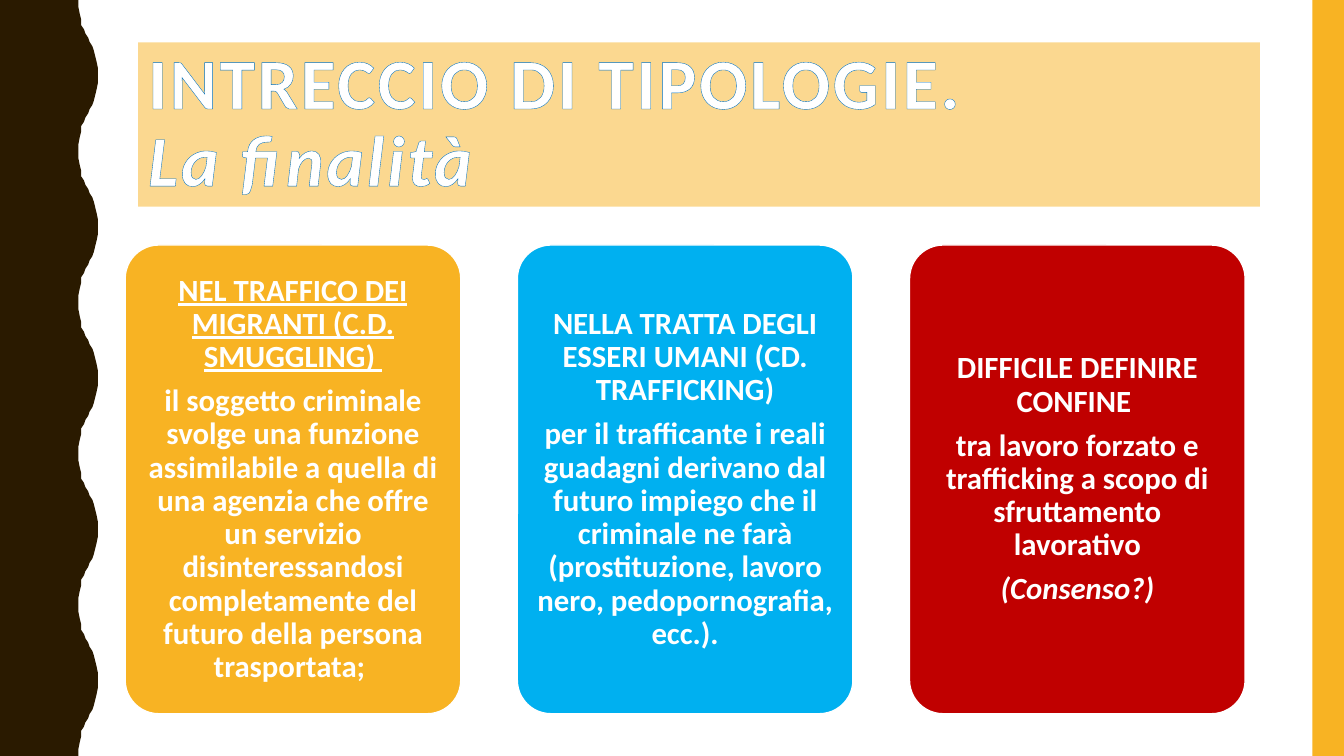
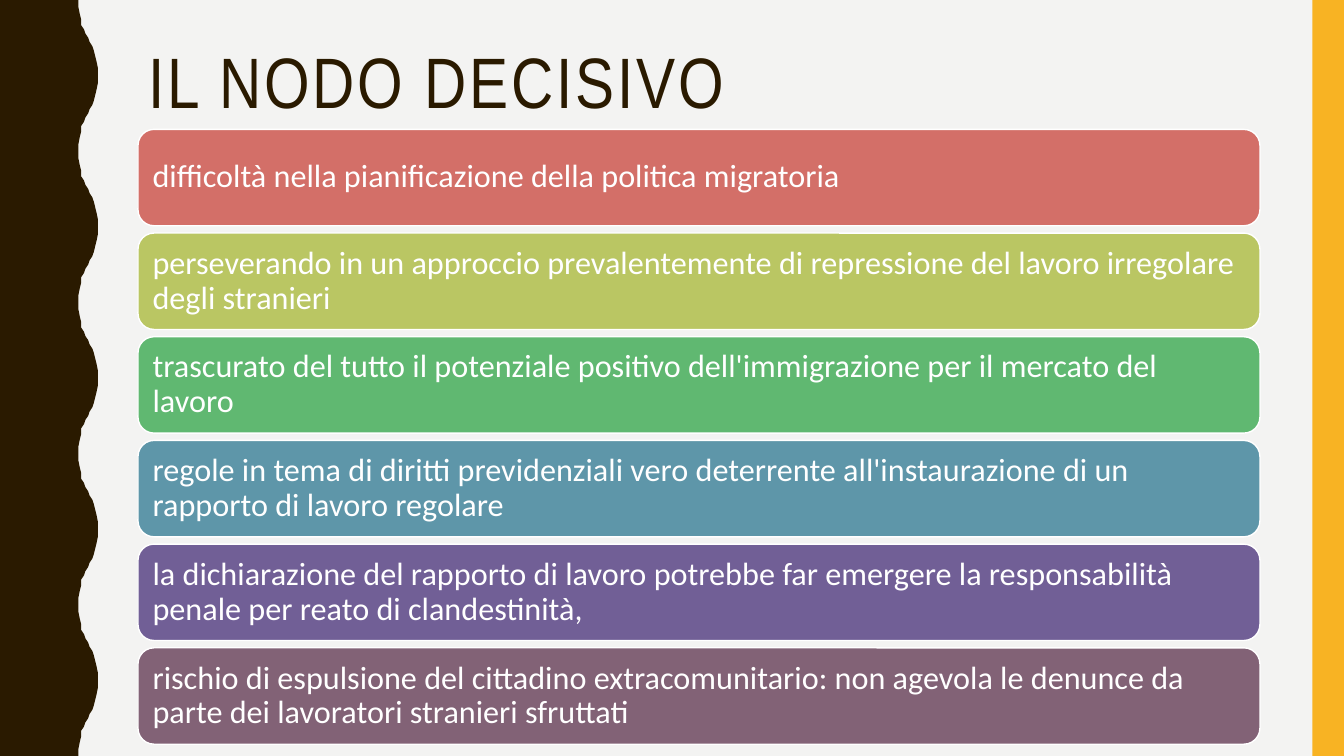
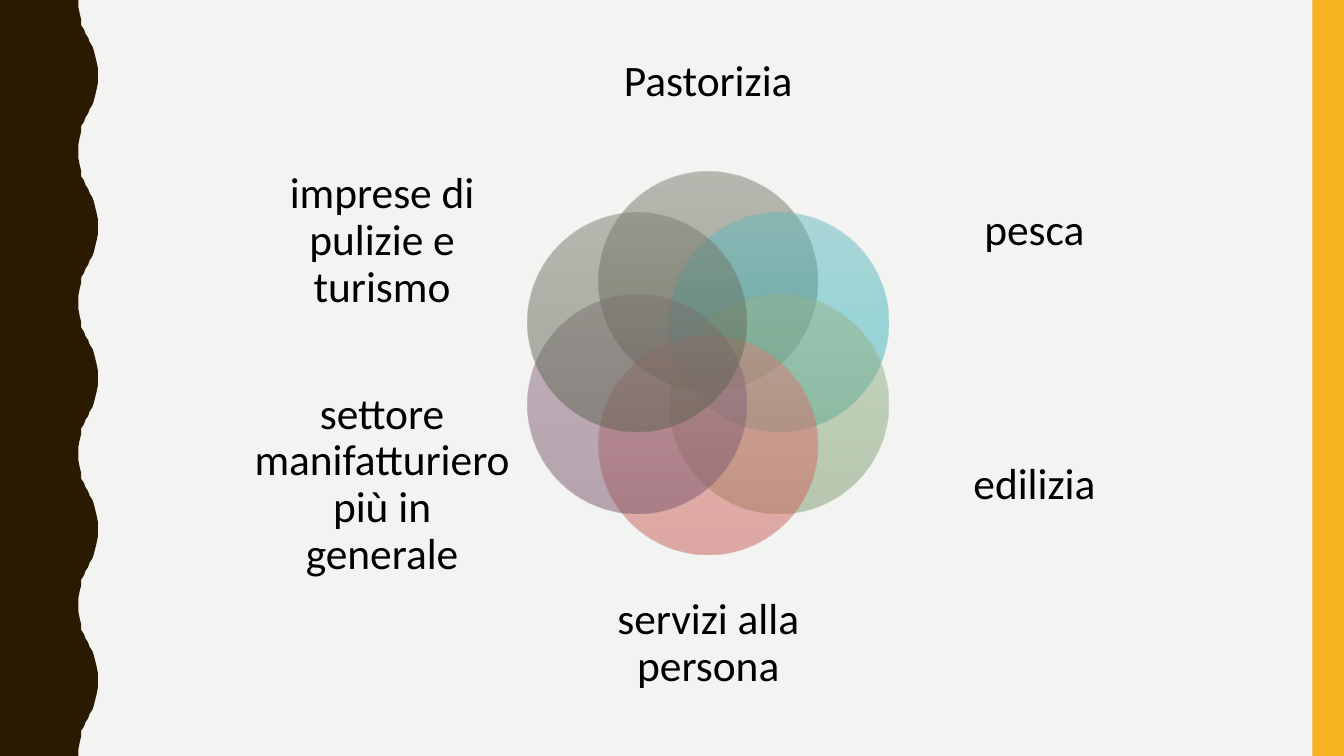
import math

import pptx
import pptx.dml.color
import pptx.enum.dml
import pptx.enum.shapes
import pptx.enum.text
import pptx.oxml
import pptx.oxml.ns
import pptx.util
from lxml import etree

Pt = pptx.util.Pt
qn = pptx.oxml.ns.qn
SHAPE = pptx.enum.shapes.MSO_SHAPE
ALIGN = pptx.enum.text.PP_ALIGN
ANCHOR = pptx.enum.text.MSO_ANCHOR

COLORS = {
    "brown": "2A1A00", "amber": "F8B323", "paper": "F3F3F2",
    "white": "FFFFFF", "black": "000000", "blue": "0070C0",
    "sky": "00B0F0", "red": "C00000",
    "coral": "D36F68", "lime": "BAC663", "green": "60B871",
    "teal": "5E96A9", "violet": "715F96", "mauve": "826276",
}
GRADIENTS = {
    "olive": ("797D70", "656B58", "5A604E"),
    "aqua": ("64BBBE", "40B7BB", "34A8AB"),
    "sage": ("9AB48E", "8BAC7C", "7B9B6C"),
    "rose": ("D9827D", "D86A63", "C65952"),
    "plum": ("917787", "846076", "76546A"),
}
WIDTH, HEIGHT = 960, 540
TITLE_BOX = (98.6, 30.2, 801.4, 117.4)
BODY_FONT = "Calibri"

# Half a wave of the left band's edge, as (x, y)
HALF_WAVE = [
    (56.2, 0), (56.4, 5), (56.9, 10), (57.6, 14.4), (58.5, 18),
    (59.8, 21), (61.2, 24), (62.7, 27), (64, 30), (65.5, 33),
    (67, 36), (68.4, 39.6), (69.2, 44), (69.8, 49), (70, 54),
]
WAVE_HEIGHT = 108


# Shared helpers
def rgb(name):
    return pptx.dml.color.RGBColor.from_string(COLORS[name])


def paint(sp, fill, line=None):
    sp.shadow.inherit = False
    sp.fill.solid()
    sp.fill.fore_color.rgb = rgb(fill)
    if line:
        sp.line.color.rgb = rgb(line)
        sp.line.width = Pt(1)
    else:
        sp.line.fill.background()


def add_box(s, shape, box, fill, line=None):
    sp = s.shapes.add_shape(shape, *map(Pt, box))
    paint(sp, fill, line)
    return sp


def add_run(p, text, size, color, font=BODY_FONT, **styles):
    r = p.add_run()
    r.text = text
    r.font.size = Pt(size)
    r.font.name = font
    r.font.color.rgb = rgb(color)
    for name, value in styles.items():
        setattr(r.font, name, value)
    return r


def write(tf, paragraphs, size, color, align, inset, **shared):
    """Fill a text frame with (text, styles) paragraphs."""
    tf.word_wrap = True
    tf.vertical_anchor = ANCHOR.MIDDLE
    tf.margin_left = tf.margin_right = Pt(inset)
    tf.margin_top = tf.margin_bottom = Pt(inset)
    for i, (text, styles) in enumerate(paragraphs):
        p = tf.add_paragraph() if i else tf.paragraphs[0]
        p.alignment = align
        p.line_spacing = 0.9
        p.space_after = Pt(round(size * 0.35, 1))
        add_run(p, text, size, color, **shared, **styles)


# Master: background, wavy band, right stripe
def decorate_master(prs, s):
    master = prs.slide_master
    master.background.fill.solid()
    master.background.fill.fore_color.rgb = rgb("paper")

    wave = HALF_WAVE + [(x, WAVE_HEIGHT - y) for x, y in HALF_WAVE[-2::-1]]
    edge = [(x, y + n * WAVE_HEIGHT)
            for n in range(HEIGHT // WAVE_HEIGHT) for x, y in wave]
    builder = s.shapes.build_freeform(0, 0, scale=Pt(1))
    builder.add_line_segments(edge + [(0, HEIGHT)], close=True)
    band = builder.convert_to_shape()
    paint(band, "brown")
    stripe = add_box(s, SHAPE.RECTANGLE, (937.5, 0, 22.5, HEIGHT), "amber")

    for i, sp in enumerate((band, stripe)):
        sp.element.nvSpPr.cNvPr.set("id", str(100 + i))
        master.shapes.element.insert(2 + i, sp.element)


# Title
def add_title(s, lines, color, font, outline=None):
    sp = s.shapes.title
    sp.left, sp.top, sp.width, sp.height = map(Pt, TITLE_BOX)
    tf = sp.text_frame
    tf.word_wrap = True
    tf.auto_size = pptx.enum.text.MSO_AUTO_SIZE.NONE
    tf.vertical_anchor = ANCHOR.TOP
    p = tf.paragraphs[0]
    p.alignment = ALIGN.LEFT
    p.line_spacing = 0.9
    for i, (text, styles) in enumerate(lines):
        if i:
            p.add_line_break()
        r = add_run(p, text, 51, color, font, **styles)
        rPr = r.font._element
        rPr.set("spc", "200")
        if outline:
            rPr.insert(0, pptx.oxml.parse_xml(
                f'<a:ln {pptx.oxml.ns.nsdecls("a")} w="{Pt(1.5)}"><a:solidFill>'
                f'<a:srgbClr val="{COLORS[outline]}"/></a:solidFill></a:ln>'))
    return sp


def add_alpha(color, percent):
    etree.SubElement(color, qn("a:alpha")).set("val", str(percent * 1000))


# Row of cards
def add_cards(s, box, cards, gap):
    left, top, width, height = box
    card_w = (width - gap * (len(cards) - 1)) / len(cards)
    for i, (fill, paragraphs) in enumerate(cards):
        card = (left + i * (card_w + gap), top, card_w, height)
        sp = add_box(s, SHAPE.ROUNDED_RECTANGLE, card, fill, "white")
        sp.adjustments[0] = 0.1
        write(sp.text_frame, paragraphs, 22, "white", ALIGN.CENTER, 6.6, bold=True)


# Stack of bars
def add_bars(s, box, bars, gap):
    left, top, width, height = box
    bar_h = (height - gap * (len(bars) - 1)) / len(bars)
    for i, (fill, text) in enumerate(bars):
        bar = (left, top + i * (bar_h + gap), width, bar_h)
        sp = add_box(s, SHAPE.ROUNDED_RECTANGLE, bar, fill, "white")
        write(sp.text_frame, [(text, {})], 23, "white", ALIGN.LEFT, 7.2)


# Ring of overlapping circles with labels
def fill_gradient(sp, hexes):
    sp.fill.gradient()
    sp.fill.gradient_angle = 270
    stops = sp.element.spPr.find(qn("a:gradFill")).find(qn("a:gsLst"))
    for stop in list(stops):
        stops.remove(stop)
    for position, value in zip((0, 50, 100), hexes):
        stop = etree.SubElement(stops, qn("a:gs"))
        stop.set("pos", str(position * 1000))
        color = etree.SubElement(stop, qn("a:srgbClr"))
        color.set("val", value)
        add_alpha(color, 50)


def add_ring(s, center, ring, diameter, sectors):
    cx, cy = center
    for i, (gradient, text, dx, dy, width, height) in enumerate(sectors):
        angle = 2 * math.pi * i / len(sectors)
        x = cx + ring * math.sin(angle) - diameter / 2
        y = cy - ring * math.cos(angle) - diameter / 2
        circle = add_box(s, SHAPE.OVAL, (x, y, diameter, diameter), "white")
        fill_gradient(circle, GRADIENTS[gradient])
        label = (cx + dx - width / 2, cy + dy - height / 2, width, height)
        tb = s.shapes.add_textbox(*map(Pt, label))
        write(tb.text_frame, [(text, {})], 31, "black", ALIGN.CENTER, 0)


# Slides
def build_purpose(s):
    s.background.fill.solid()
    s.background.fill.fore_color.rgb = rgb("white")
    title = add_title(s, [("INTRECCIO DI TIPOLOGIE.", {"bold": True}),
                          ("La finalità", {"bold": True, "italic": True})],
                      "white", BODY_FONT, outline="blue")
    title.fill.solid()
    title.fill.fore_color.rgb = rgb("amber")
    add_alpha(title.element.spPr.find(qn("a:solidFill"))[0], 50)
    add_cards(s, (89.4, 175, 800, 334.8), [
        ("amber", [
            ("NEL TRAFFICO DEI MIGRANTI (C.D. SMUGGLING) ", {"underline": True}),
            ("il soggetto criminale svolge una funzione assimilabile a quella di "
             "una agenzia che offre un servizio disinteressandosi completamente "
             "del futuro della persona trasportata; ", {})]),
        ("sky", [
            ("NELLA TRATTA DEGLI ESSERI UMANI (CD. TRAFFICKING)", {}),
            ("per il trafficante i reali guadagni derivano dal futuro impiego che "
             "il criminale ne farà (prostituzione, lavoro nero, pedopornografia, "
             "ecc.).", {})]),
        ("red", [
            ("DIFFICILE DEFINIRE CONFINE ", {}),
            ("tra lavoro forzato e trafficking a scopo di sfruttamento "
             "lavorativo", {}),
            ("(Consenso?)", {"italic": True})]),
    ], gap=40.4)


def build_key_issue(s):
    add_title(s, [("IL NODO DECISIVO", {})], "brown", "Arial Narrow")
    add_bars(s, (98.6, 92.4, 801.4, 439.2), [
        ("coral", "difficoltà nella pianificazione della politica migratoria"),
        ("lime", "perseverando in un approccio prevalentemente di repressione del "
                 "lavoro irregolare degli stranieri"),
        ("green", "trascurato del tutto il potenziale positivo dell'immigrazione "
                  "per il mercato del lavoro"),
        ("teal", "regole in tema di diritti previdenziali vero deterrente "
                 "all'instaurazione di un rapporto di lavoro regolare"),
        ("violet", "la dichiarazione del rapporto di lavoro potrebbe far emergere "
                   "la responsabilità penale per reato di clandestinità,"),
        ("mauve", "rischio di espulsione del cittadino extracomunitario: non "
                  "agevola le denunce da parte dei lavoratori stranieri sfruttati"),
    ], gap=5.2)


def build_sectors(s):
    add_ring(s, (505.9, 259.2), 58.6, 156.4, [
        ("olive", "Pastorizia", 0, -200.3, 195, 106.6),
        ("aqua", "pesca", 233, -93.6, 185, 116.6),
        ("sage", "edilizia", 233, 87.5, 185, 130.3),
        ("rose", "servizi alla persona", 0, 200.9, 195, 106.6),
        ("plum", "settore manifatturiero più in generale", -233, 87.5, 185, 130.3),
        ("olive", "imprese di pulizie e turismo", -233, -86.8, 185, 130.3),
    ])


def main():
    prs = pptx.Presentation()
    prs.slide_width, prs.slide_height = Pt(WIDTH), Pt(HEIGHT)
    title_only, blank = prs.slide_layouts[5], prs.slide_layouts[6]
    s = prs.slides.add_slide(title_only)
    decorate_master(prs, s)
    build_purpose(s)
    build_key_issue(prs.slides.add_slide(title_only))
    build_sectors(prs.slides.add_slide(blank))
    prs.save("out.pptx")


if __name__ == "__main__":
    main()
